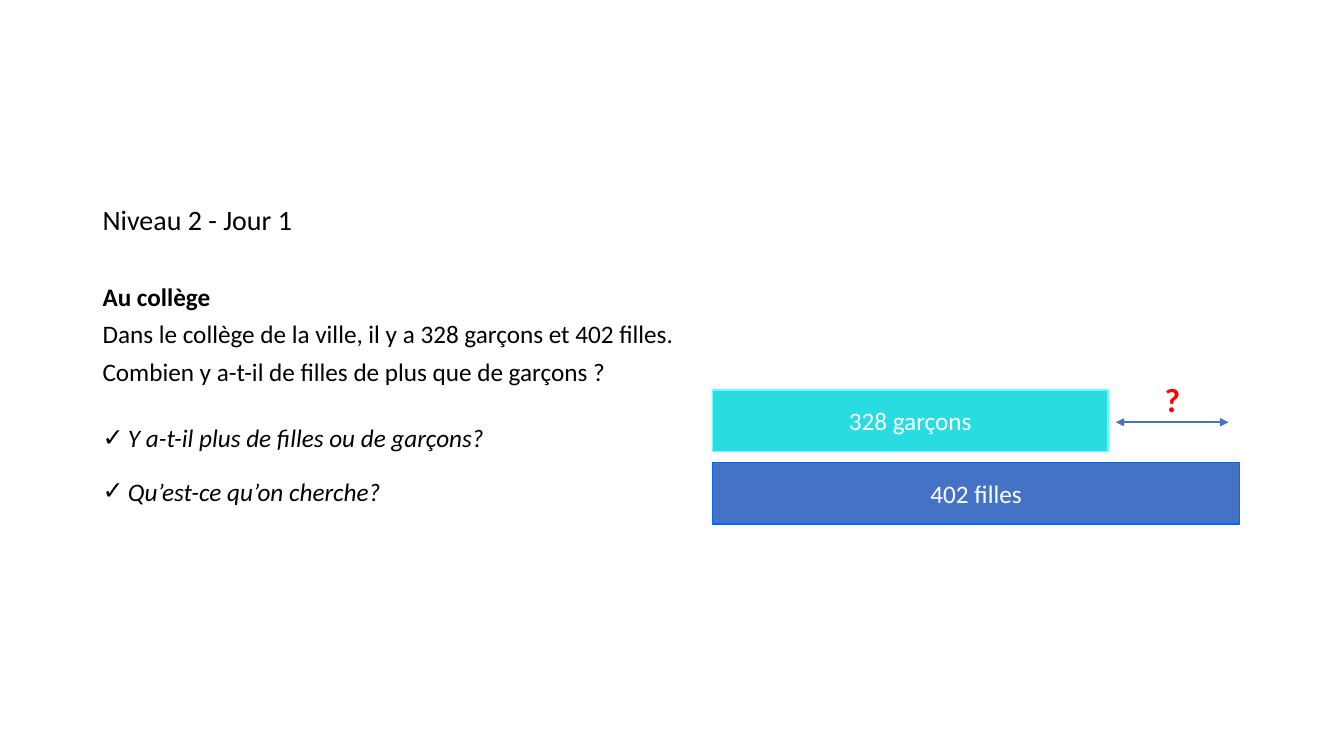
from lxml.etree import SubElement
from pptx import Presentation
from pptx.dml.color import RGBColor
from pptx.enum.shapes import MSO_CONNECTOR as Connector, MSO_SHAPE as Shape
from pptx.enum.text import MSO_ANCHOR as Anchor, MSO_AUTO_SIZE as AutoSize, PP_ALIGN as Align
from pptx.oxml.ns import qn
from pptx.util import Cm, Pt

rgb = RGBColor.from_string


def write(paragraph, text, size=18, color="000000", bold=False, italic=False,
          align=Align.LEFT, spacing=1.0, before=0):
    run = paragraph.add_run()
    run.text = text
    run.font.name = "Calibri"
    run.font.size = Pt(size)
    run.font.color.rgb = rgb(color)
    run.font.bold = bold
    run.font.italic = italic
    paragraph.alignment = align
    paragraph.line_spacing = spacing
    paragraph.space_before = Pt(before)


prs = Presentation()
prs.slide_width, prs.slide_height = Cm(33.87), Cm(19.05)
slide = prs.slides.add_slide(prs.slide_layouts[1])
title = slide.shapes.title
title.element.getparent().remove(title.element)

# Problem statement and guiding questions
problem = slide.placeholders[1]
problem.left, problem.top, problem.width, problem.height = Cm(2.33), Cm(5.08), Cm(29.21), Cm(12.09)
problem.text_frame.auto_size = AutoSize.NONE
problem.text_frame.vertical_anchor = Anchor.TOP

lines = [
    ("Niveau 2 - Jour 1", None, dict(size=20, spacing=0.9)),
    ("Au collège", None, dict(bold=True, spacing=1.24, before=26.5)),
    ("Dans le collège de la ville, il y a 328 garçons et 402 filles.", None, dict(spacing=1.24)),
    ("Combien y a-t-il de filles de plus que de garçons ?", None, dict(spacing=1.24)),
    ("Y a-t-il plus de filles ou de garçons?", "✓", dict(italic=True, spacing=1.07, before=24.5)),
    ("Qu’est-ce qu’on cherche?", "✓", dict(italic=True, spacing=1.07, before=15)),
]
for index, (text, bullet, style) in enumerate(lines):
    frame = problem.text_frame
    line = frame.paragraphs[0] if index == 0 else frame.add_paragraph()
    write(line, text, **style)
    props = line._p.get_or_add_pPr()
    indent = Cm(0.64) if bullet else 0
    props.set("marL", str(indent))
    props.set("indent", str(-indent))
    if bullet:
        SubElement(props, qn("a:buChar")).set("char", bullet)
    else:
        SubElement(props, qn("a:buNone"))

# Bars comparing girls and boys
for label, top, width, fill, outline in [
    ("402 filles", 11.66, 13.28, "4472C4", "0066FF"),
    ("328 garçons", 9.83, 9.96, "28DCE0", "66FFFF"),
]:
    bar = slide.shapes.add_shape(Shape.RECTANGLE, Cm(17.96), Cm(top), Cm(width), Cm(1.55))
    bar.shadow.inherit = False
    bar.fill.solid()
    bar.fill.fore_color.rgb = rgb(fill)
    bar.line.color.rgb = rgb(outline)
    bar.line.width = Pt(1)
    bar.text_frame.vertical_anchor = Anchor.MIDDLE
    write(bar.text_frame.paragraphs[0], label, color="FFFFFF", align=Align.CENTER)

# Unknown difference
unknown = slide.shapes.add_textbox(Cm(28.91), Cm(9.42), Cm(1.27), Cm(1.27))
unknown.text_frame.word_wrap = True
write(unknown.text_frame.paragraphs[0], "?", size=24, color="FF0000", bold=True, align=Align.CENTER)

difference = slide.shapes.add_connector(Connector.STRAIGHT, Cm(28.12), Cm(10.64), Cm(30.96), Cm(10.64))
difference.line.color.rgb = rgb("4472C4")
difference.line.width = Pt(1.5)
stroke = difference.line._get_or_add_ln()
for end in ("a:headEnd", "a:tailEnd"):
    SubElement(stroke, qn(end)).set("type", "triangle")
SubElement(difference._element.spPr, qn("a:effectLst"))

prs.save("out.pptx")
